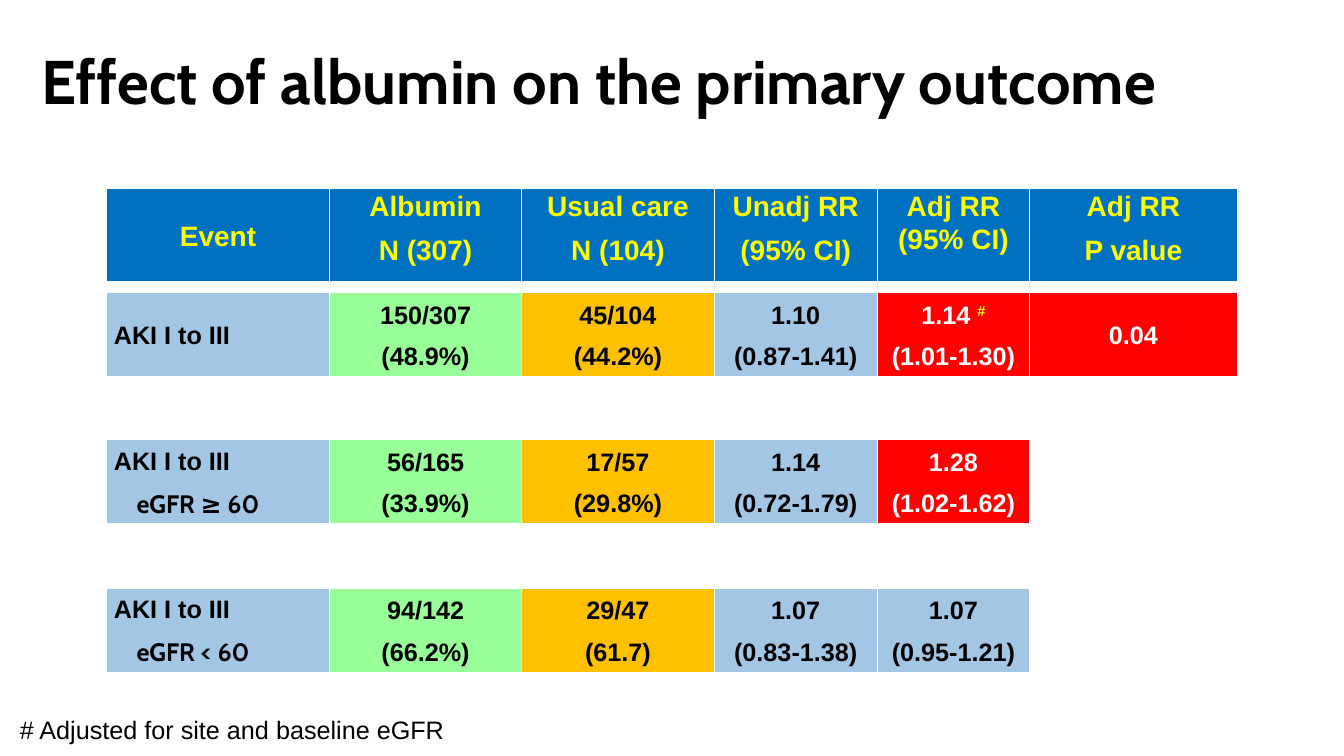
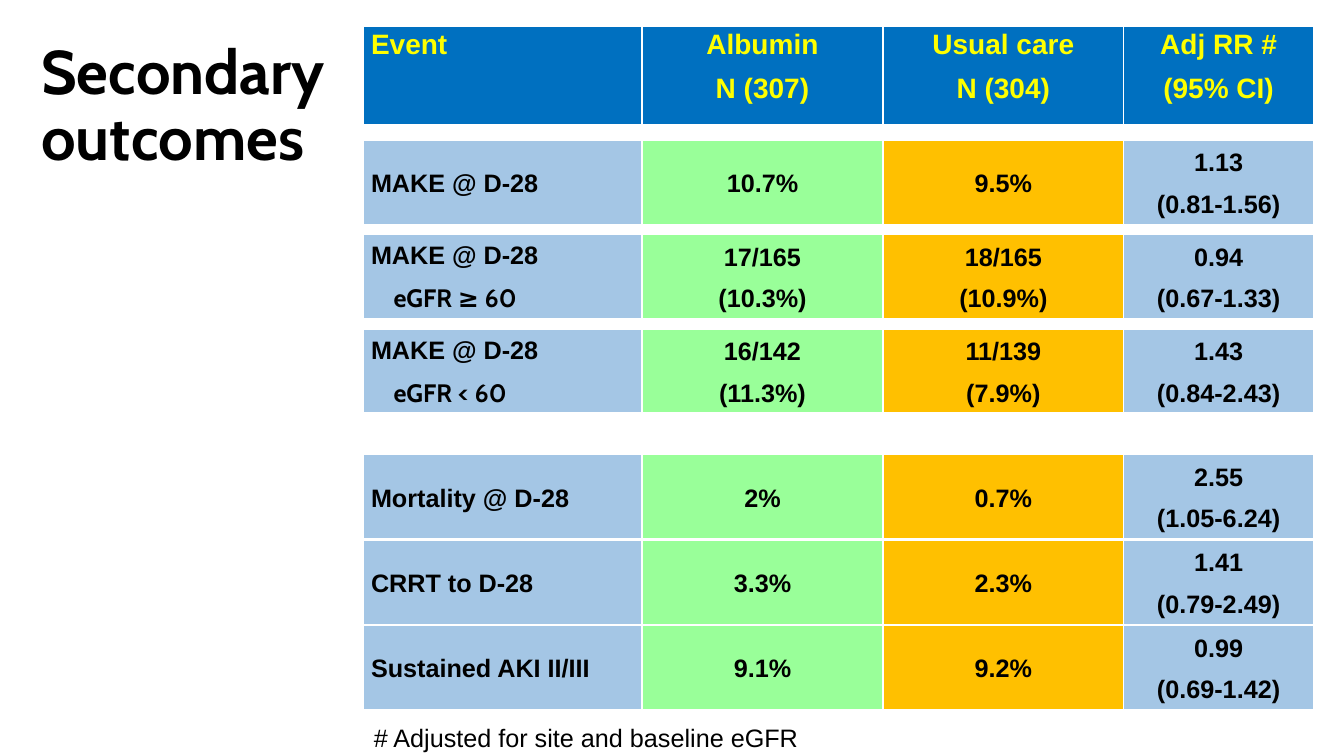
from pptx import Presentation
from pptx import util as u
from pptx.dml.color import RGBColor
from pptx.enum import text
from pptx.oxml import parse_xml
from pptx.oxml.ns import nsdecls

BLACK, WHITE, YELLOW = "000000", "FFFFFF", "FFFF00"
NAVY, BLUE, GREEN, ORANGE, RED = "0070C0", "A4C6E5", "99FF99", "FFC000", "FF0000"
BODY_FONT, TITLE_FONT = "Arial", "Cabin"
BORDERS = {"lnL": 1, "lnR": 1, "lnT": 1, "lnB": 3}
ROW_HEIGHT = 2.15
TOP, MIDDLE = text.MSO_ANCHOR.TOP, text.MSO_ANCHOR.MIDDLE
LEFT, CENTER = text.PP_ALIGN.LEFT, text.PP_ALIGN.CENTER
FOOTNOTE = "# Adjusted for site and baseline eGFR"


def rgb(value):
    return RGBColor.from_string(value)


def style(font, size, color, bold=False, name=BODY_FONT):
    font.size = u.Pt(size)
    font.name = name
    font.bold = bold
    font.color.rgb = rgb(color)


def write(tf, content):
    tf.text = content
    return tf.paragraphs


def add_title(s, content, height):
    tf = s.shapes.add_textbox(u.Cm(0.79), u.Cm(0.28), u.Cm(29.21), u.Cm(height)).text_frame
    tf.word_wrap = True
    tf.vertical_anchor = MIDDLE
    for p in write(tf, content):
        p.line_spacing = 0.9
        style(p.font, 44, BLACK, True, TITLE_FONT)


def add_footnote(s, left, top):
    tf = s.shapes.add_textbox(u.Cm(left), u.Cm(top), u.Cm(11.3), u.Cm(1.02)).text_frame
    tf.word_wrap = False
    for p in write(tf, FOOTNOTE):
        style(p.font, 18, BLACK)


def set_borders(cell):
    tc_pr = cell._tc.get_or_add_tcPr()
    for side, width in BORDERS.items():
        tc_pr.append(parse_xml(
            f'<a:{side} {nsdecls("a")} w="{u.Pt(width)}"><a:solidFill>'
            f'<a:srgbClr val="{WHITE}"/></a:solidFill></a:{side}>'))


def fill_cell(cell, content, fill, color, size, align, anchor):
    cell.margin_left = cell.margin_right = u.Cm(0.18)
    cell.margin_top = cell.margin_bottom = 0
    cell.vertical_anchor = anchor
    set_borders(cell)
    cell.fill.solid()
    cell.fill.fore_color.rgb = rgb(fill)
    for p in write(cell.text_frame, content):
        subgroup = p.text.startswith("eGFR")
        if subgroup:
            p._p.get_or_add_pPr().set("marL", str(u.Cm(0.57)))
        p.alignment = align
        p.line_spacing = 1.07
        p.space_after = u.Pt(8)
        style(p.font, size, color, True, TITLE_FONT if subgroup else BODY_FONT)


def add_strip(s, left, top, widths, height):
    frame = s.shapes.add_table(1, len(widths), u.Cm(left), u.Cm(top),
                               u.Cm(sum(widths)), u.Cm(height))
    table = frame.table
    table.first_row = table.horz_banding = False
    for column, width in zip(table.columns, widths):
        column.width = u.Cm(width)
    return table


def add_header(s, left, top, widths, height, labels, event_align, event_anchor):
    table = add_strip(s, left, top, widths, height)
    for i, label in enumerate(labels):
        align, anchor = (CENTER, TOP) if i else (event_align, event_anchor)
        fill_cell(table.cell(0, i), label, NAVY, YELLOW, 20, align, anchor)


def add_row(s, left, top, widths, values, fills):
    table = add_strip(s, left, top, widths[:len(values)], ROW_HEIGHT)
    for i, (value, fill) in enumerate(zip(values, fills)):
        color = WHITE if fill == RED else BLACK
        fill_cell(table.cell(0, i), value, fill, color, 18, CENTER if i else LEFT, MIDDLE)
    return table


def add_superscript(cell, mark):
    r = cell.text_frame.paragraphs[0].add_run()
    r.text = mark
    r.font.color.rgb = rgb(YELLOW)
    r.font._element.set("baseline", "30000")


def build_primary(s):
    left, widths = 2.69, [5.61, 4.85, 4.85, 4.11, 3.84, 5.23]
    fills = [BLUE, GREEN, ORANGE, BLUE, RED, RED]
    add_title(s, "Effect of albumin on the primary outcome", 3.68)
    add_header(s, left, 4.75, widths, 2.39,
               ["Event", "Albumin\nN (307)", "Usual care\nN (104)", "Unadj RR\n(95% CI)",
                "Adj RR (95% CI)", "Adj RR\nP value"], CENTER, MIDDLE)
    overall = add_row(s, left, 7.37, widths,
                      ["AKI I to III", "150/307\n(48.9%)", "45/104\n(44.2%)",
                       "1.10\n(0.87-1.41)", "1.14 \n(1.01-1.30)", "0.04"], fills)
    add_superscript(overall.cell(0, 4), "#")
    add_row(s, left, 11.08, widths,
            ["AKI I to III\neGFR ≥ 60", "56/165\n(33.9%)", "17/57\n(29.8%)",
             "1.14\n(0.72-1.79)", "1.28\n(1.02-1.62)"], fills)
    add_row(s, left, 14.82, widths,
            ["AKI I to III\neGFR < 60", "94/142\n(66.2%)", "29/47\n(61.7)",
             "1.07\n(0.83-1.38)", "1.07\n(0.95-1.21)"], fills[:4] + [BLUE])
    add_footnote(s, 0.25, 17.88)


def build_secondary(s):
    left, widths = 9.17, [7.01, 6.07, 6.07, 4.78]
    fills = [BLUE, GREEN, ORANGE, BLUE]
    kidney_events = [
        ["MAKE @ D-28", "10.7%", "9.5%", "1.13\n(0.81-1.56)"],
        ["MAKE @ D-28\neGFR ≥ 60", "17/165\n(10.3%)", "18/165\n(10.9%)", "0.94\n(0.67-1.33)"],
        ["MAKE @ D-28\neGFR < 60", "16/142\n(11.3%)", "11/139\n(7.9%)", "1.43\n(0.84-2.43)"],
    ]
    other_events = [
        ["Mortality @ D-28", "2%", "0.7%", "2.55\n(1.05-6.24)"],
        ["CRRT to D-28", "3.3%", "2.3%", "1.41\n(0.79-2.49)"],
        ["Sustained AKI II/III", "9.1%", "9.2%", "0.99\n(0.69-1.42)"],
    ]
    add_header(s, left, 0.67, widths, 2.5,
               ["Event", "Albumin\nN (307)", "Usual care\nN (304)", "Adj RR #\n(95% CI)"],
               LEFT, TOP)
    for top, step, events in [(3.53, 2.38, kidney_events), (11.46, 2.15, other_events)]:
        for i, values in enumerate(events):
            add_row(s, left, top + i * step, widths, values, fills)
    add_footnote(s, left, 18.08)
    add_title(s, "Secondary\noutcomes", 4.85)


def main():
    prs = Presentation()
    prs.slide_width, prs.slide_height = u.Cm(33.87), u.Cm(19.05)
    for build in (build_primary, build_secondary):
        build(prs.slides.add_slide(prs.slide_layouts[6]))
    prs.save("out.pptx")


if __name__ == "__main__":
    main()
